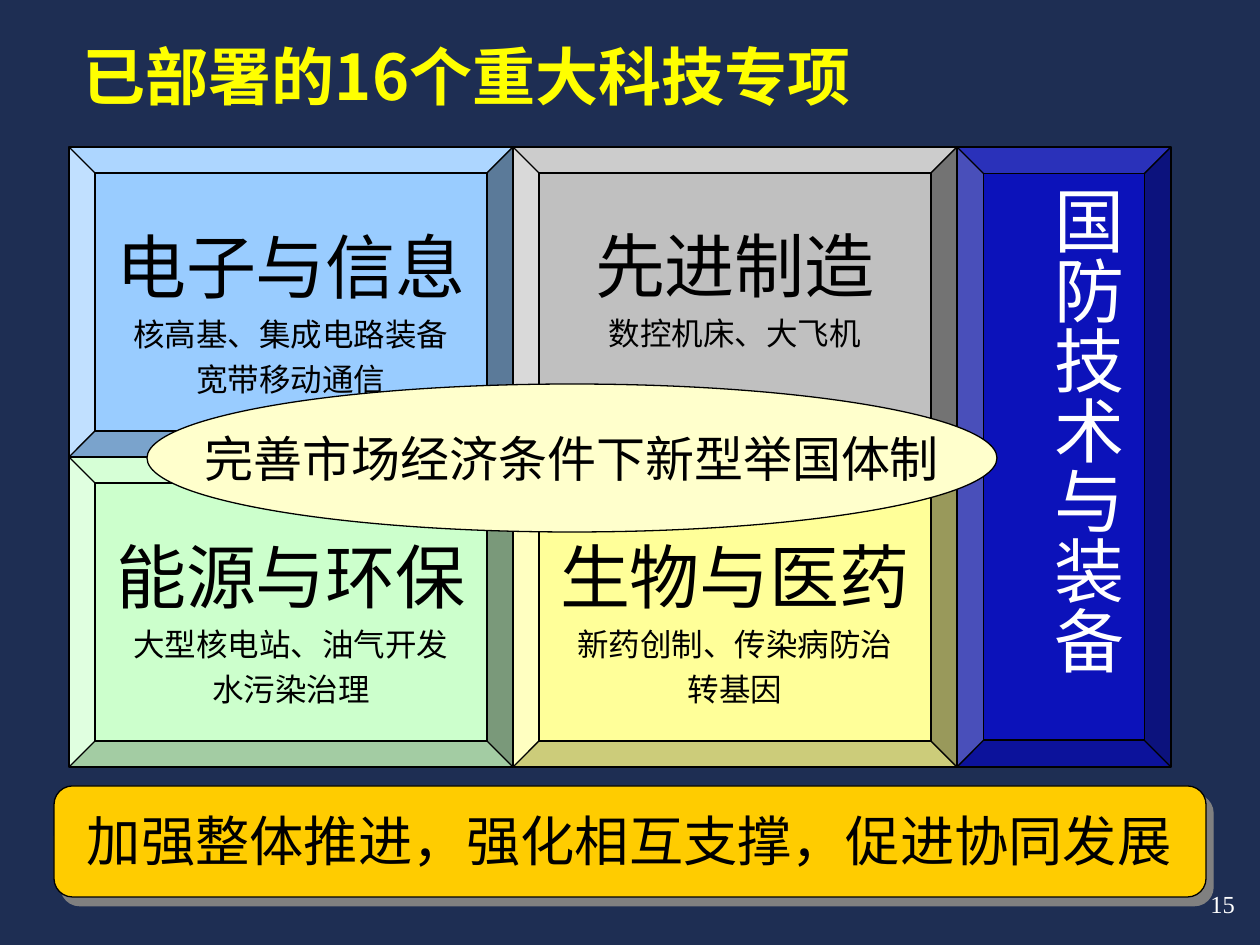
from dataclasses import dataclass

from lxml import etree
from pptx import Presentation
from pptx.dml.color import RGBColor
from pptx.enum.shapes import MSO_SHAPE
from pptx.enum.text import MSO_ANCHOR, PP_ALIGN
from pptx.oxml.ns import qn
from pptx.util import Emu, Pt

BEVEL, ELLIPSE, ROUNDED = MSO_SHAPE.BEVEL, MSO_SHAPE.OVAL, MSO_SHAPE.ROUNDED_RECTANGLE
LEFT, CENTER, RIGHT = PP_ALIGN.LEFT, PP_ALIGN.CENTER, PP_ALIGN.RIGHT
TOP, MIDDLE = MSO_ANCHOR.TOP, MSO_ANCHOR.MIDDLE
EMU_PER_PX = 914400 / 126


@dataclass(frozen=True)
class Theme:
    background: str = "1E2E53"
    title: str = "FFFF00"
    ink: str = "000000"
    light: str = "FFFFFF"
    electronics: str = "99CCFF"
    manufacturing: str = "C0C0C0"
    energy: str = "CCFFCC"
    biology: str = "FFFF99"
    defence: str = "0000FF"
    system: str = "FFFFCC"
    banner: str = "FFCC00"
    shadow: str = "808080"
    font: str = "Noto Sans CJK SC"
    number_font: str = "Times New Roman"
    title_size: int = 36
    heading_size: int = 40
    detail_size: int = 18
    system_size: int = 28
    banner_size: int = 31
    number_size: int = 14
    line_width: float = 0.75


def px(n):
    return Emu(round(n * EMU_PER_PX))


class SlideBuilder:
    def __init__(self, prs, theme):
        self.theme = theme
        self.slide = prs.slides.add_slide(prs.slide_layouts[5])
        fill = self.slide.background.fill
        fill.solid()
        fill.fore_color.rgb = RGBColor.from_string(theme.background)

    def fill_text(self, sp, lines, color, align=CENTER, anchor=MIDDLE, wrap=False,
                  insets=(14, 6, 14, 6), spacing=None, bold=False, font=None):
        """Fill a shape with (text, size) lines; insets run left, top, right, bottom."""
        tf = sp.text_frame
        tf.word_wrap, tf.vertical_anchor = wrap, anchor
        tf.margin_left, tf.margin_top, tf.margin_right, tf.margin_bottom = map(px, insets)
        for i, (text, size) in enumerate(lines):
            p = tf.paragraphs[0] if i == 0 else tf.add_paragraph()
            p.alignment, p.line_spacing = align, spacing
            p.space_before = Pt(0)
            r = p.add_run()
            r.text = text
            r.font.size, r.font.bold = Pt(size), bold
            r.font.name = font or self.theme.font
            r.font.color.rgb = RGBColor.from_string(color)
            latin = r.font._element.find(qn("a:latin"))
            ea = etree.Element(qn("a:ea"), typeface=self.theme.font)
            latin.addnext(ea)

    def title(self, text, x, y, w, h):
        sp = self.slide.shapes.title
        sp.left, sp.top, sp.width, sp.height = map(px, (x, y, w, h))
        self.fill_text(sp, [(text, self.theme.title_size)], self.theme.title,
                       align=LEFT, wrap=True, bold=True)

    def shape(self, kind, x, y, w, h, fill, adjust=None, alpha=None):
        sp = self.slide.shapes.add_shape(kind, *map(px, (x, y, w, h)))
        sp.shadow.inherit = False
        sp.fill.solid()
        sp.fill.fore_color.rgb = RGBColor.from_string(fill)
        sp.line.color.rgb = RGBColor.from_string(self.theme.ink)
        sp.line.width = Pt(self.theme.line_width)
        if adjust is not None:
            sp.adjustments[0] = adjust
        if alpha is not None:
            color = sp._element.spPr.find(qn("a:solidFill"))[0]
            etree.SubElement(color, qn("a:alpha"), val=str(alpha * 1000))
        return sp

    def hard_shadow(self, sp, distance, degrees):
        effects = sp._element.spPr.find(qn("a:effectLst"))
        shadow = etree.SubElement(effects, qn("a:outerShdw"), dist=str(int(Pt(distance))),
                                  dir=str(degrees * 60000), algn="ctr", rotWithShape="0")
        etree.SubElement(shadow, qn("a:srgbClr"), val=self.theme.shadow)

    def text(self, text, x, y, w, h, size, color, vertical=False, **style):
        sp = self.slide.shapes.add_textbox(*map(px, (x, y, w, h)))
        self.fill_text(sp, [(text, size)], color, **style)
        if vertical:
            sp.text_frame._txBody.bodyPr.set("vert", "eaVert")

    def field(self, x, y, w, h, fill, heading, details, lift=0):
        """Bevelled panel; lift raises its centred text by enlarging the bottom inset."""
        t = self.theme
        sp = self.shape(BEVEL, x, y, w, h, fill, adjust=0.084)
        lines = [(heading, t.heading_size)] + [(d, t.detail_size) for d in details]
        self.fill_text(sp, lines, t.ink, spacing=1.2, insets=(14, 6, 14, 6 + lift))


def main():
    prs = Presentation()
    prs.slide_width, prs.slide_height = px(1260), px(945)
    t = Theme()
    s = SlideBuilder(prs, t)

    s.title("已部署的16个重大科技专项", 69, -4, 888, 158)
    s.text("15", 987, 872, 262, 63, t.number_size, t.light,
           align=RIGHT, font=t.number_font)

    banner = s.shape(ROUNDED, 54, 786, 1152, 111, t.banner, adjust=0.167)
    s.hard_shadow(banner, 6.4, 51)
    s.text("加强整体推进，强化相互支撑，促进协同发展", 62, 801, 1144, 79,
           t.banner_size, t.ink, align=LEFT, anchor=TOP, wrap=True,
           insets=(25, 6, 6, 6))

    left, top, field_w, field_h = 69, 147, 444, 310
    fields = [
        (0, 0, t.electronics, "电子与信息", ["核高基、集成电路装备", "宽带移动通信"], 0),
        (1, 1, t.biology, "生物与医药", ["新药创制、传染病防治", "转基因"], 0),
        (0, 1, t.energy, "能源与环保", ["大型核电站、油气开发", "水污染治理"], 0),
        (1, 0, t.manufacturing, "先进制造", ["数控机床、大飞机"], 46),
    ]
    for col, row, fill, heading, details, lift in fields:
        s.field(left + col * field_w, top + row * field_h, field_w, field_h,
                fill, heading, details, lift)

    s.shape(BEVEL, left + 2 * field_w, top, 214, 2 * field_h, t.defence,
            adjust=0.125, alpha=60)
    s.text("国防技术与装备", 1031, 180, 112, 557, t.heading_size, t.light,
           vertical=True, align=LEFT, anchor=TOP, wrap=True)

    system = s.shape(ELLIPSE, 147, 384, 850, 148, t.system)
    s.fill_text(system, [("完善市场经济条件下新型举国体制", t.system_size)], t.ink)

    prs.save("out.pptx")


if __name__ == "__main__":
    main()
